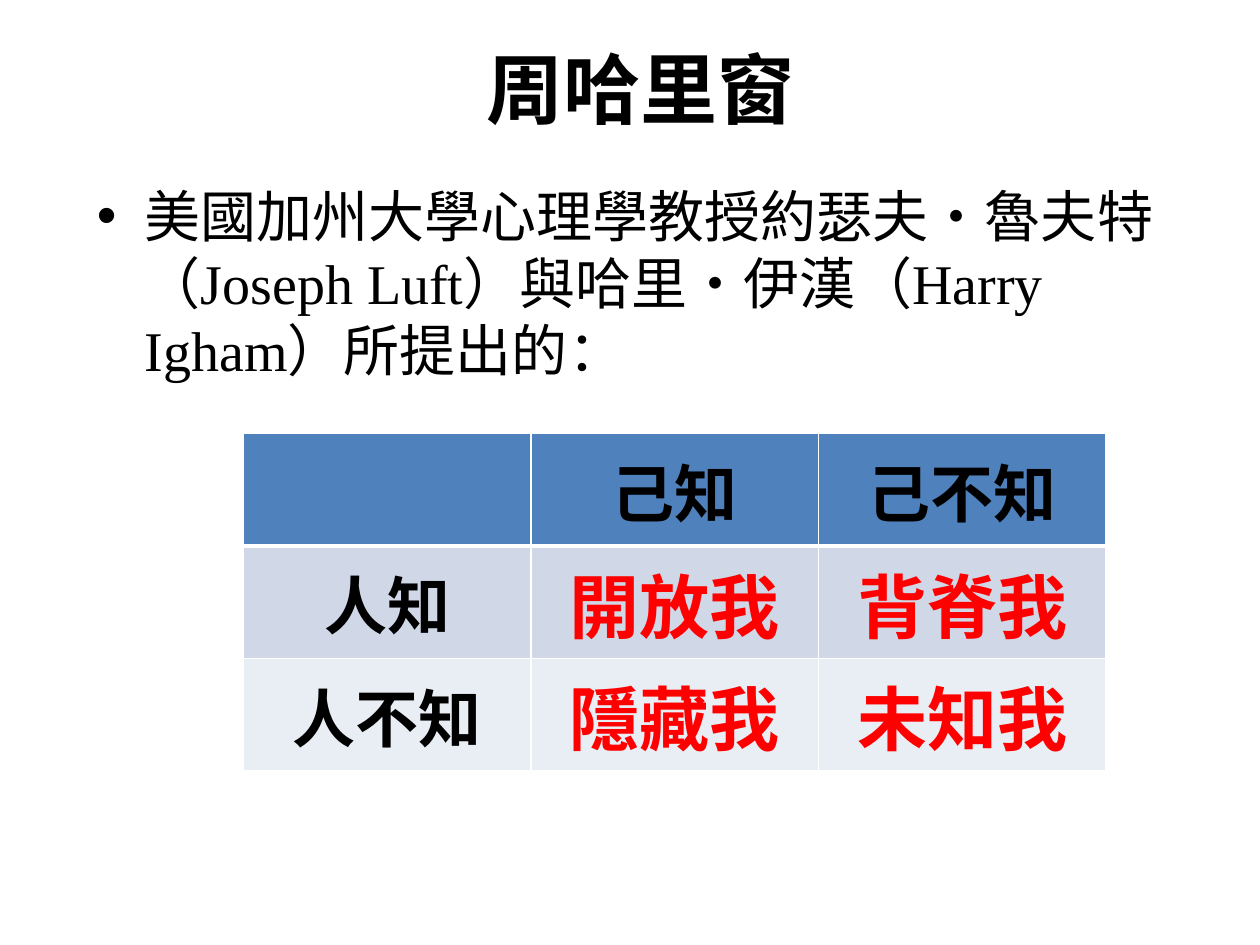
from lxml.etree import SubElement as Sub
from pptx import Presentation
from pptx.dml.color import RGBColor as RGB
from pptx.enum.text import MSO_ANCHOR as Anchor, PP_ALIGN as Align
from pptx.oxml.ns import qn
from pptx.util import Inches, Pt

INK = {"black": "000000", "red": "FF0000", "white": "FFFFFF",
       "head": "4F81BD", "band": "D0D8E8", "pale": "E9EDF4"}
SANS = "Noto Sans CJK SC"
ROWS = [["", "己知", "己不知"],
        ["人知", "開放我", "背脊我"],
        ["人不知", "隱藏我", "未知我"]]


def add_run(para, text, size, face, ink="black", bold=False):
    run = para.add_run()
    run.text = text
    font = run.font
    font.size, font.name, font.bold = Pt(size), face, bold
    font.color.rgb = RGB.from_string(INK[ink])
    Sub(run._r.get_or_add_rPr(), qn("a:ea"), typeface=SANS)


def add_title(slide):
    title = slide.shapes.title
    title.left, title.top = Inches(0.67), Inches(0)
    title.width, title.height = Inches(8.83), Inches(1.39)
    title.text_frame.vertical_anchor = Anchor.MIDDLE
    para = title.text_frame.paragraphs[0]
    para.alignment = Align.CENTER
    add_run(para, "周哈里窗", 44, "Calibri", bold=True)


def add_body(slide):
    box = slide.shapes.add_textbox(Inches(0.67), Inches(1.39),
                                   Inches(8.83), Inches(1.8))
    frame = box.text_frame
    frame.word_wrap = True
    para = frame.paragraphs[0]
    props = para._p.get_or_add_pPr()
    props.set("marL", str(Inches(0.38)))
    props.set("indent", str(-Inches(0.38)))
    Sub(props, qn("a:buFont"), typeface="Arial")
    Sub(props, qn("a:buChar"), char="•")
    add_run(para, "美國加州大學心理學教授約瑟夫‧魯夫特（Joseph Luft）與哈里‧伊漢"
            "（Harry Igham）所提出的", 32, "Times New Roman")
    add_run(para, "：", 32, SANS)


def add_edge(cell, side, width):
    line = Sub(cell._tc.get_or_add_tcPr(), qn(f"a:ln{side}"), w=str(Pt(width)))
    fill = Sub(line, qn("a:solidFill"))
    Sub(fill, qn("a:srgbClr"), val=INK["white"])


def fill_cell(cell, text, row, col):
    cell.vertical_anchor = Anchor.MIDDLE
    thick = {(0, "B"), (1, "T")}
    for side in "LRTB":
        add_edge(cell, side, 3 if (row, side) in thick else 1)
    cell.fill.solid()
    cell.fill.fore_color.rgb = RGB.from_string(INK[("head", "band", "pale")[row]])
    if text:
        para = cell.text_frame.paragraphs[0]
        para.alignment = Align.CENTER
        size, ink = (40, "red") if row and col else (36, "black")
        add_run(para, text, size, SANS, ink, True)


def add_grid(slide):
    grid = slide.shapes.add_table(3, 3, Inches(1.93), Inches(3.44),
                                  Inches(6.85), Inches(2.68)).table
    for row, texts in enumerate(ROWS):
        for col, text in enumerate(texts):
            fill_cell(grid.cell(row, col), text, row, col)


def main():
    deck = Presentation()
    deck.slide_width, deck.slide_height = Inches(10), Inches(7.5)
    slide = deck.slides.add_slide(deck.slide_layouts[5])
    add_title(slide)
    add_body(slide)
    add_grid(slide)
    deck.save("out.pptx")


if __name__ == "__main__":
    main()
